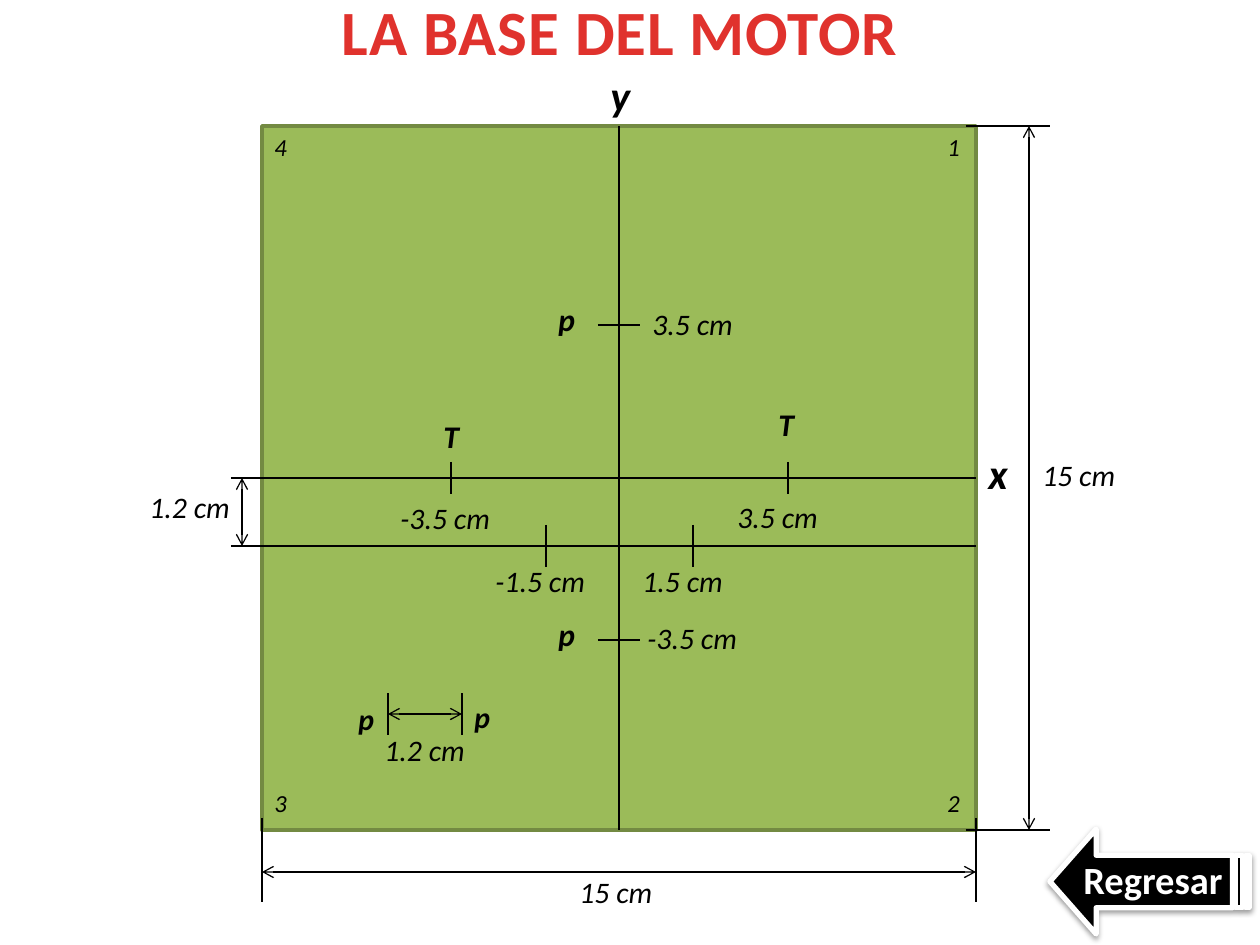
from pptx import Presentation
from pptx.util import Pt
from pptx.dml.color import RGBColor
from pptx.enum.shapes import MSO_SHAPE, MSO_CONNECTOR
from pptx.enum.text import PP_ALIGN, MSO_ANCHOR
from pptx.oxml import parse_xml
from pptx.oxml.ns import qn, nsdecls
from lxml.etree import SubElement

SCALE = 914400 / 126


def px(num):
    return round(num * SCALE)


def color(text):
    return RGBColor.from_string(text)


class Board:
    font = "Calibri"
    ink = "000000"

    def __init__(self, slide):
        self.slide = slide
        self.shapes = slide.shapes

    def style(self, frame, text, size, tint, bold, ital):
        frame.text = text
        run = frame.paragraphs[0].runs[0]
        run.font.name = self.font
        run.font.size = Pt(size)
        run.font.bold = bold
        run.font.italic = ital
        run.font.color.rgb = color(tint)
        return run

    def title(self, text, left, top, width, height):
        shape = self.shapes.title
        shape.left, shape.top = px(left), px(top)
        shape.width, shape.height = px(width), px(height)
        frame = shape.text_frame
        run = self.style(frame, text, 36, "E0322D", True, False)
        run.font._element.set("spc", "50")
        frame.word_wrap = False
        frame.vertical_anchor = MSO_ANCHOR.MIDDLE
        frame.paragraphs[0].alignment = PP_ALIGN.CENTER

    def label(self, text, left, top, width=126, height=49, size=17,
              bold=False, ital=True, tint=ink):
        box = self.shapes.add_textbox(px(left), px(top), px(width), px(height))
        box.text_frame.word_wrap = True
        self.style(box.text_frame, text, size, tint, bold, ital)

    def mark(self, text, left, top, size=18):
        self.label(text, left, top, 42, 50, size, bold=True)

    def shape(self, kind, left, top, width, height, fill, edge, weight):
        shape = self.shapes.add_shape(
            kind, px(left), px(top), px(width), px(height))
        shape.shadow.inherit = False
        shape.fill.solid()
        shape.fill.fore_color.rgb = color(fill)
        shape.line.color.rgb = color(edge)
        shape.line.width = Pt(weight)
        return shape

    def line(self, x1, y1, x2, y2, heads=False):
        line = self.shapes.add_connector(
            MSO_CONNECTOR.STRAIGHT, px(x1), px(y1), px(x2), px(y2))
        line.line.color.rgb = color(self.ink)
        line.line.width = Pt(0.75)
        props = line._element.spPr
        SubElement(props, qn("a:effectLst"))
        if heads:
            for end in ("a:headEnd", "a:tailEnd"):
                SubElement(props.find(qn("a:ln")), qn(end), type="arrow")

    def back(self, text, left, top, width, height):
        arrow = self.shape(MSO_SHAPE.STRIPED_RIGHT_ARROW, left, top, width,
                           height, self.ink, "FFFFFF", 3)
        arrow.adjustments[0] = 0.5
        arrow.adjustments[1] = 0.44
        props = arrow._element.spPr
        props.find(qn("a:xfrm")).set("flipH", "1")
        props.find(qn("a:effectLst")).append(parse_xml(
            f'<a:outerShdw {nsdecls("a")} blurRad="40000" dist="20000" '
            'dir="5400000" rotWithShape="0"><a:srgbClr val="000000">'
            '<a:alpha val="38000"/></a:srgbClr></a:outerShdw>'))
        self.label(text, left + 21, top + 21, 168, 66, 22,
                   bold=True, ital=False, tint="FFFFFF")


def main():
    deck = Presentation()
    deck.slide_width, deck.slide_height = px(1260), px(945)
    board = Board(deck.slides.add_slide(deck.slide_layouts[5]))
    left, top, right, base = 262, 126, 976, 830
    mid, axis, low = 619, 478, 546

    board.title("LA BASE DEL MOTOR", 326, -14, 588, 89)
    board.shape(MSO_SHAPE.RECTANGLE, left, top, right - left, base - top,
                "9BBB59", "738A42", 2)

    board.line(mid, top, mid, base)
    for y in (axis, low):
        board.line(231, y, right, y)
    for y in (325, 640):
        board.line(mid - 21, y, mid + 21, y)
    for x, y, half in ((451, axis, 16), (788, axis, 16), (546, low, 21),
                       (693, low, 21), (388, 714, 21), (462, 714, 21)):
        board.line(x, y - half, x, y + half)
    for y in (top, base):
        board.line(right - 10, y, 1050, y)
    for x in (left, right):
        board.line(x, 818, x, 902)
    for ends in ((242, axis, 242, low), (388, 714, 462, 714),
                 (1029, top, 1029, base), (left, 872, right, 872)):
        board.line(*ends, heads=True)

    for text, x, y in (("4", left, top), ("1", 935, top),
                       ("3", left, 782), ("2", 935, 782)):
        board.label(text, x, y, 42, 42, 14)
    for text, x, y in (("y", 598, 63), ("x", 976, 441)):
        board.mark(text, x, y, 24)
    for text, x, y in (("p", 546, 294), ("p", 546, 609),
                       ("T", 431, 411), ("T", 766, 399)):
        board.mark(text, x, y)
    for x, y in ((346, 695), (462, 693)):
        board.mark("p", x, y, 17)
    for text, x, y in (("3.5 cm", 640, 300), ("3.5 cm", 725, 493),
                       ("-3.5 cm", 635, 614), ("-3.5 cm", 388, 494),
                       ("1.5 cm", 630, 557), ("-1.5 cm", 483, 557),
                       ("1.2 cm", 137, 483), ("1.2 cm", 372, 726),
                       ("15 cm", 1030, 451), ("15 cm", 567, 868)):
        board.label(text, x, y)

    board.back("Regresar", 1050, 829, 199, 105)
    deck.save("out.pptx")


if __name__ == "__main__":
    main()
